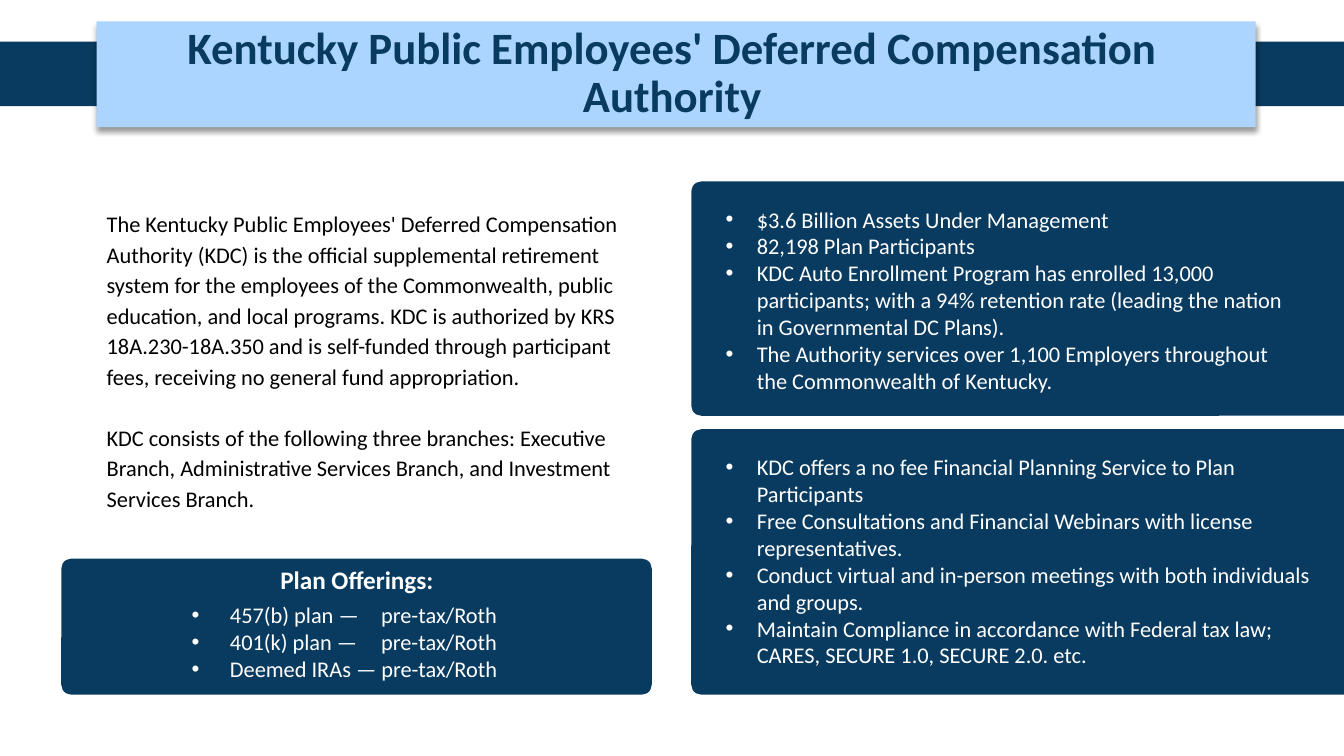
from dataclasses import dataclass

from lxml.etree import SubElement
from pptx import Presentation
from pptx.dml.color import RGBColor
from pptx.enum.shapes import MSO_SHAPE
from pptx.enum.text import MSO_ANCHOR, MSO_AUTO_SIZE, PP_ALIGN
from pptx.oxml.ns import qn
from pptx.util import Inches, Pt

RECT = MSO_SHAPE.RECTANGLE
ROUND = MSO_SHAPE.ROUNDED_RECTANGLE
MIDDLE = MSO_ANCHOR.MIDDLE
CENTER = PP_ALIGN.CENTER
LEFT = PP_ALIGN.LEFT
FIT = MSO_AUTO_SIZE.SHAPE_TO_FIT_TEXT
FIXED = MSO_AUTO_SIZE.NONE

COLS, ROWS = 160, 90
CELL = Inches(7.5) / ROWS


@dataclass(frozen=True)
class Theme:
    font: str = "Calibri"
    navy: str = "093B60"
    sky: str = "ABD5FF"
    ink: str = "000000"
    light: str = "FFFFFF"
    title: int = 32
    head: int = 18
    body: int = 16
    lead: float = 21.8


@dataclass(frozen=True)
class Box:
    x: float
    y: float
    w: float
    h: float

    def inner(self, x, y, w, h):
        return Box(self.x + x, self.y + y, w, h)

    def size(self):
        return [round(n * CELL) for n in (self.x, self.y, self.w, self.h)]


THEME = Theme()
TITLE = "Kentucky Public Employees' Deferred Compensation Authority"
ABOUT = [
    "The Kentucky Public Employees' Deferred Compensation Authority (KDC) is the "
    "official supplemental retirement system for the employees of the Commonwealth, "
    "public education, and local programs. KDC is authorized by KRS 18A.230-18A.350 "
    "and is self-funded through participant fees, receiving no general fund appropriation.",
    "KDC consists of the following three branches: Executive Branch, Administrative "
    "Services Branch, and Investment Services Branch.",
]
FACTS = [
    "$3.6 Billion Assets Under Management",
    "82,198 Plan Participants",
    "KDC Auto Enrollment Program has enrolled 13,000 participants; with a 94% "
    "retention rate (leading the nation in Governmental DC Plans).",
    "The Authority services over 1,100 Employers throughout the Commonwealth of Kentucky.",
]
HELP = [
    "KDC offers a no fee Financial Planning Service to Plan Participants",
    "Free Consultations and Financial Webinars with license representatives.",
    "Conduct virtual and in-person meetings with both individuals and groups.",
    "Maintain Compliance in accordance with Federal tax law; CARES, SECURE 1.0, "
    "SECURE 2.0. etc.",
]
PLANS = [
    "457(b) plan —\tpre-tax/Roth",
    "401(k) plan —\tpre-tax/Roth",
    "Deemed IRAs — pre-tax/Roth",
]


def add_block(slide, box, color, kind=RECT):
    block = slide.shapes.add_shape(kind, *box.size())
    block.shadow.inherit = False
    block.fill.solid()
    block.fill.fore_color.rgb = RGBColor.from_string(color)
    block.line.fill.background()
    if kind == ROUND:
        block.adjustments[0] = 1.2 / min(box.w, box.h)
    return block


def add_shade(block):
    effects = block.element.spPr.find(qn("a:effectLst"))
    shade = SubElement(effects, qn("a:outerShdw"), blurRad=str(Pt(4)),
                       dist=str(Pt(3)), dir="5400000", algn="t", rotWithShape="0")
    color = SubElement(shade, qn("a:srgbClr"), val=THEME.ink)
    SubElement(color, qn("a:alpha"), val="40000")


def add_run(para, text, size, color, bold=False):
    run = para.add_run()
    run.text = text
    run.font.name = THEME.font
    run.font.size = Pt(size)
    run.font.bold = bold
    run.font.color.rgb = RGBColor.from_string(color)


def add_mark(para, indent, hang, tabs):
    props = para._p.get_or_add_pPr()
    props.set("marL", str(Inches(indent)))
    props.set("indent", str(-Inches(hang)))
    SubElement(props, qn("a:buFont"), typeface="Arial")
    SubElement(props, qn("a:buChar"), char="•")
    if tabs:
        stops = SubElement(props, qn("a:tabLst"))
        for stop in tabs:
            SubElement(stops, qn("a:tab"), pos=str(Inches(stop)), algn="l")


def add_text(slide, box, lines, size, color, bold=False, align=LEFT):
    frame = slide.shapes.add_textbox(*box.size()).text_frame
    frame.word_wrap = True
    frame.auto_size = FIT
    for i, line in enumerate(lines):
        para = frame.add_paragraph() if i else frame.paragraphs[0]
        para.alignment = align
        add_run(para, line, size, color, bold)
    return frame


def add_list(slide, box, lines, indent=0.31, hang=0.31, tabs=()):
    frame = add_text(slide, box, lines, THEME.body, THEME.light)
    for para in frame.paragraphs:
        add_mark(para, indent, hang, tabs)


def add_header(slide, box):
    band = 14.5
    for x in (0, box.w - band):
        add_block(slide, box.inner(x, 2.4, band, 7.7), THEME.navy)
    add_shade(add_block(slide, box.inner(11.5, 0, 138, 12.6), THEME.sky))
    title = slide.shapes.title
    title.left, title.top, title.width, title.height = box.inner(11.04, 1.65, 138, 9.2).size()
    title.element.getparent().append(title.element)
    frame = title.text_frame
    frame.word_wrap = True
    frame.auto_size = FIXED
    frame.vertical_anchor = MIDDLE
    para = frame.paragraphs[0]
    para.alignment = CENTER
    para.line_spacing = 0.9
    add_run(para, TITLE, THEME.title, THEME.navy, True)


def add_about(slide, box):
    frame = add_text(slide, box, ABOUT, THEME.body, THEME.ink)
    frame.margin_left = frame.margin_right = frame.margin_top = frame.margin_bottom = 0
    for para in frame.paragraphs:
        para.line_spacing = Pt(THEME.lead)
    frame.paragraphs[1].space_before = Pt(THEME.lead)


def add_panel(slide, box, lines, width):
    add_block(slide, box, THEME.navy, ROUND)
    add_list(slide, box.inner(2.9, 2.3, width, box.h - 4.3), lines)


def add_plans(slide, box):
    add_block(slide, box, THEME.navy, ROUND)
    add_list(slide, box.inner(12.9, 4.5, 44.6, 10.9), PLANS, 0.5, 0.38, (1.49, 2))
    add_text(slide, box.inner(24.7, 0.1, 21, 4.8), ["Plan Offerings:"],
             THEME.head, THEME.light, True, CENTER)


def main():
    deck = Presentation()
    deck.slide_width = round(COLS * CELL)
    deck.slide_height = round(ROWS * CELL)
    slide = deck.slides.add_slide(deck.slide_layouts[5])
    add_header(slide, Box(0, 2.55, COLS, 12.6))
    add_about(slide, Box(12.7, 24.6, 61.1, 36.8))
    add_panel(slide, Box(82.3, 21.6, 84.7, 27.9), FACTS, 70.4)
    add_panel(slide, Box(82.3, 51.1, 84.7, 31.6), HELP, 74.8)
    add_plans(slide, Box(7.3, 66.5, 70.3, 16.2))
    deck.save("out.pptx")


if __name__ == "__main__":
    main()
